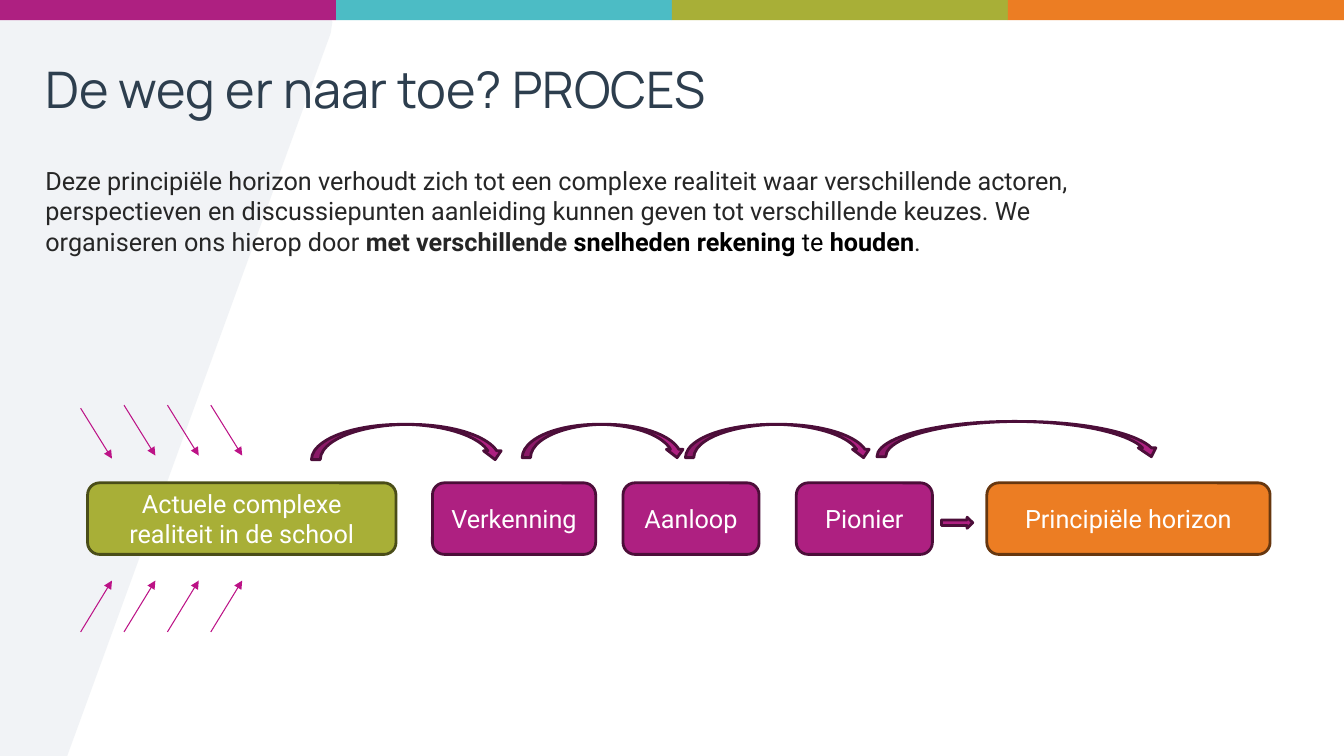
import dataclasses
import typing

import pptx
import pptx.dml.color
import pptx.enum.shapes
import pptx.enum.text
import pptx.oxml.ns
import pptx.util
from lxml import etree

Pt = pptx.util.Pt
Preset = pptx.enum.shapes.MSO_SHAPE
Align = pptx.enum.text.PP_ALIGN
Anchor = pptx.enum.text.MSO_ANCHOR
qn = pptx.oxml.ns.qn

MAGENTA, DARK_MAGENTA = "AE2081", "4C0E39"
GREEN, ORANGE = "A8AF37", "EC7D23"
WIDTH, HEIGHT = 960, 540


@dataclasses.dataclass
class Block:
    """One preset shape of the slide, in points."""
    left: float
    top: float
    width: float
    height: float
    fill: str
    border: typing.Optional[str] = None
    text: str = ""
    preset: typing.Any = Preset.ROUNDED_RECTANGLE


@dataclasses.dataclass
class TextRun:
    text: str
    color: str
    bold: bool = False


def rgb(color: str) -> pptx.dml.color.RGBColor:
    return pptx.dml.color.RGBColor.from_string(color)


def add_run(paragraph, piece: TextRun, size: float, font: str = "Roboto") -> None:
    run = paragraph.add_run()
    run.text = piece.text
    run.font.name = font
    run.font.size = Pt(size)
    run.font.bold = piece.bold
    run.font.color.rgb = rgb(piece.color)


def add_block(slide, block: Block) -> None:
    shape = slide.shapes.add_shape(
        block.preset, Pt(block.left), Pt(block.top), Pt(block.width), Pt(block.height))
    shape.shadow.inherit = False
    shape.fill.solid()
    shape.fill.fore_color.rgb = rgb(block.fill)
    if block.border:
        shape.line.color.rgb = rgb(block.border)
        shape.line.width = Pt(2)
    else:
        shape.line.fill.background()
    if block.text:
        shape.text_frame.word_wrap = True
        shape.text_frame.vertical_anchor = Anchor.MIDDLE
        paragraph = shape.text_frame.paragraphs[0]
        paragraph.alignment = Align.CENTER
        add_run(paragraph, TextRun(block.text, "FFFFFF"), 18)


def add_thin_arrow(slide, left: float, start: float, end: float) -> None:
    """Draw a slanted arrow that runs 22.4 points to the right."""
    connector = slide.shapes.add_connector(
        pptx.enum.shapes.MSO_CONNECTOR.STRAIGHT,
        Pt(left), Pt(start), Pt(left + 22.4), Pt(end))
    connector.line.color.rgb = rgb("BC1286")
    connector.line.width = Pt(0.75)
    properties = connector.element.spPr
    etree.SubElement(properties.find(qn("a:ln")), qn("a:tailEnd"), type="triangle")
    etree.SubElement(properties, qn("a:effectLst"))


def add_backdrop(slide) -> None:
    """Draw the pale slanted panel on the left."""
    corners = [(222.5, 3.6), (235.3, 9.4), (237.4, 15.8), (236.2, 23.8),
               (48, HEIGHT), (0, HEIGHT)]
    builder = slide.shapes.build_freeform(0, Pt(3.6))
    builder.add_line_segments([(Pt(x), Pt(y)) for x, y in corners], close=True)
    panel = builder.convert_to_shape()
    panel.shadow.inherit = False
    panel.line.fill.background()
    panel.fill.solid()
    panel.fill.fore_color.rgb = rgb("E8ECF0")
    color = panel.element.spPr.find(qn("a:solidFill")).find(qn("a:srgbClr"))
    etree.SubElement(color, qn("a:alpha"), val="59000")


def fill_placeholder(placeholder, top: float, height: float, anchor,
                     pieces: list[TextRun], size: float, font: str) -> None:
    """Place a placeholder in front of the shapes so far and write one paragraph."""
    placeholder.element.getparent().append(placeholder.element)
    placeholder.left, placeholder.top = Pt(25.2), Pt(top)
    placeholder.width, placeholder.height = Pt(772), Pt(height)
    frame = placeholder.text_frame
    frame.word_wrap = True
    frame.auto_size = pptx.enum.text.MSO_AUTO_SIZE.NONE
    frame.vertical_anchor = anchor
    paragraph = frame.paragraphs[0]
    properties = paragraph._p.get_or_add_pPr()
    properties.set("marL", "0")
    properties.set("indent", "0")
    etree.SubElement(properties, qn("a:buNone"))
    paragraph.alignment = Align.LEFT
    paragraph.space_before = Pt(0)
    for piece in pieces:
        add_run(paragraph, piece, size, font)


TITLE = [TextRun("De weg er naar toe? PROCES", "2D3E4E")]
BODY = [
    TextRun("Deze principiële horizon verhoudt zich tot een complexe realiteit waar "
            "verschillende actoren, perspectieven en discussiepunten aanleiding kunnen "
            "geven tot verschillende keuzes. We organiseren ons hierop door ", "262626"),
    TextRun("met verschillende ", "262626", True),
    TextRun("snelheden rekening ", "000000", True),
    TextRun("te ", "000000"),
    TextRun("houden", "000000", True),
    TextRun(".", "262626"),
]
STAGES = [
    Block(62.6, 344.9, 220.3, 51.1, GREEN, "4A4D18",
          "Actuele complexe realiteit in de school"),
    Block(308.9, 344.9, 116.6, 51.1, MAGENTA, DARK_MAGENTA, "Verkenning"),
    Block(445, 344.9, 97.2, 51.1, MAGENTA, DARK_MAGENTA, "Aanloop"),
    Block(568.8, 344.9, 97.2, 51.1, MAGENTA, DARK_MAGENTA, "Pionier"),
    Block(704.9, 344.9, 202.3, 51.1, ORANGE, "67370F", "Principiële horizon"),
]
JUMPS = [
    Block(left, top, width, height, MAGENTA, DARK_MAGENTA, preset=Preset.CURVED_DOWN_ARROW)
    for left, top, width, height in [
        (222.5, 303.1, 137.5, 25.2), (373, 303.1, 116.6, 23.8),
        (489.6, 303.1, 133.2, 23.8), (626.4, 301, 202.3, 25.2)]
]
STEP = Block(672.5, 369.4, 22.3, 7.9, MAGENTA, DARK_MAGENTA, preset=Preset.RIGHT_ARROW)


def main() -> None:
    presentation = pptx.Presentation()
    presentation.slide_width, presentation.slide_height = Pt(WIDTH), Pt(HEIGHT)
    slide = presentation.slides.add_slide(presentation.slide_layouts[1])

    add_backdrop(slide)
    band = WIDTH / 4
    for index, color in enumerate([MAGENTA, "4CBCC5", GREEN, ORANGE]):
        add_block(slide, Block(index * band, 0, band, 14.4, color, preset=Preset.RECTANGLE))

    body = slide.placeholders[1]
    fill_placeholder(body, 88.6, 395.3, Anchor.TOP, BODY, 18, "Roboto")
    body.text_frame.margin_top = Pt(29.6)
    fill_placeholder(slide.shapes.title, 37.4, 51.1, Anchor.MIDDLE, TITLE, 36, "Manrope")

    for index, start in enumerate([291.6, 289.4, 289.4, 289.4]):
        left = 57.6 + 31 * index
        add_thin_arrow(slide, left, start, start + 36)
        add_thin_arrow(slide, left, 451.4, 414.7)
    for block in [*STAGES, *JUMPS, STEP]:
        add_block(slide, block)

    presentation.save("out.pptx")


if __name__ == "__main__":
    main()
